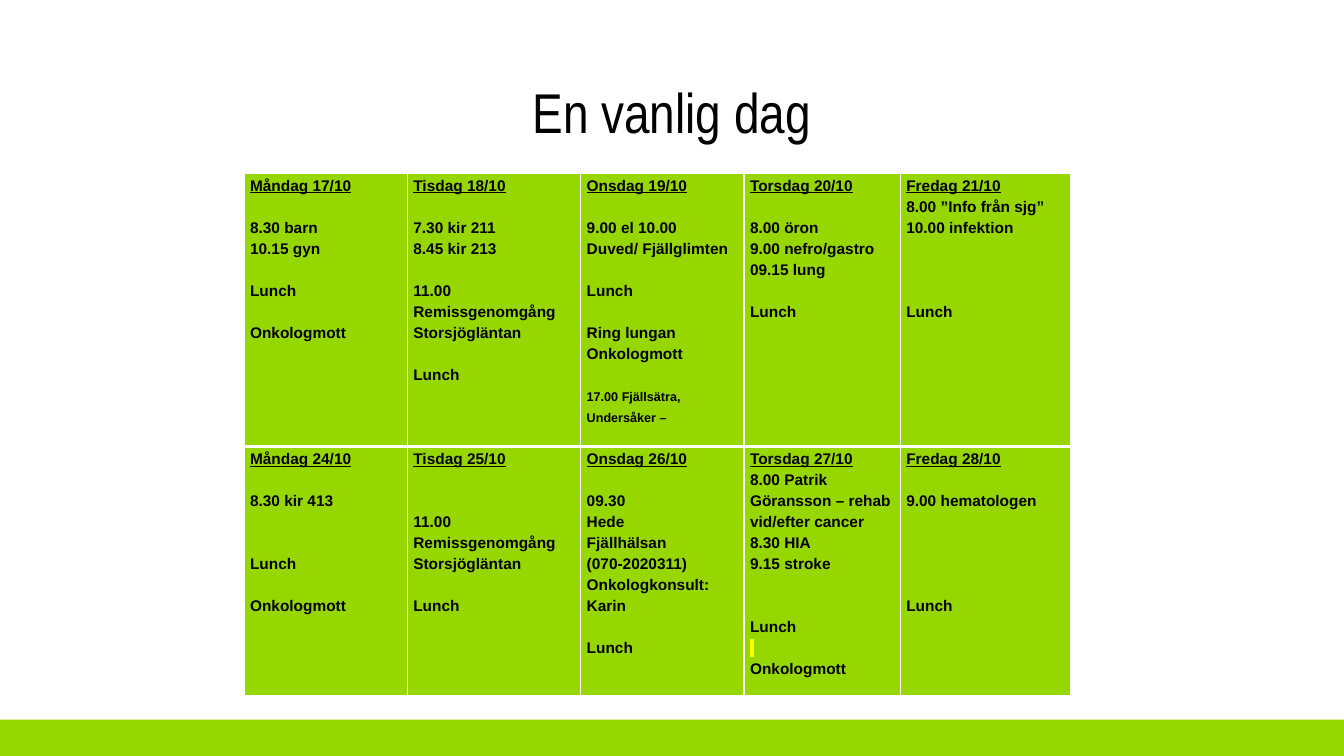
from lxml.etree import SubElement
from pptx import Presentation
from pptx.dml.color import RGBColor
from pptx.enum.shapes import MSO_SHAPE
from pptx.enum.text import MSO_ANCHOR, PP_ALIGN
from pptx.oxml.ns import qn
from pptx.util import Inches, Pt

WIDTH, HEIGHT = 13.33, 7.5
GREEN, WHITE, BLACK, YELLOW = "97D700", "FFFFFF", "000000", "FFFF00"
LINE = 15
COLUMNS = [1.62, 1.72, 1.62, 1.55, 1.69]
ROWS = [2.71, 2.47]

# Each day: heading, then groups of entries; a number is the count of free lines before the next entry.
WEEKS = [
    [
        ["Måndag 17/10", 1, "8.30 barn", "10.15 gyn", 1, "Lunch", 1, "Onkologmott"],
        ["Tisdag 18/10", 1, "7.30 kir 211", "8.45 kir 213", 1, "11.00",
         "Remissgenomgång", "Storsjögläntan", 1, "Lunch"],
        ["Onsdag 19/10", 1, "9.00 el 10.00", "Duved/ Fjällglimten", 1, "Lunch", 1,
         "Ring lungan", "Onkologmott", 1, ("17.00 Fjällsätra, Undersåker –", {"size": 9})],
        ["Torsdag 20/10", 1, "8.00 öron", "9.00 nefro/gastro", "09.15 lung", 1, "Lunch"],
        ["Fredag 21/10", "8.00 ”Info från sjg”", "10.00 infektion", 3, "Lunch"],
    ],
    [
        ["Måndag 24/10", 1, "8.30 kir 413", 2, "Lunch", 1, "Onkologmott"],
        ["Tisdag 25/10", 2, "11.00", "Remissgenomgång", "Storsjögläntan", 1, "Lunch"],
        ["Onsdag 26/10", 1, "09.30", "Hede", "Fjällhälsan", "(070-2020311)",
         "Onkologkonsult: Karin", 1, "Lunch"],
        ["Torsdag 27/10", "8.00 Patrik Göransson – rehab", "vid/efter cancer", "8.30 HIA",
         "9.15 stroke", 2, "Lunch", (" ", {"highlight": YELLOW}), "Onkologmott"],
        ["Fredag 28/10", 1, "9.00 hematologen", 4, "Lunch"],
    ],
]


def color(value):
    return RGBColor.from_string(value)


def add_color(parent, tag, value):
    SubElement(SubElement(parent, qn(tag)), qn("a:srgbClr"), val=value)


def write(para, text, size=11, font="Arial", bold=True, underline=False,
          highlight=None, align=PP_ALIGN.LEFT, spacing=Pt(LINE), before=0):
    para.alignment = align
    para.line_spacing = spacing
    if before:
        para.space_before = Pt(before)
    span = para.add_run()
    span.text = text
    span.font.size = Pt(size)
    span.font.bold = bold
    span.font.underline = underline
    span.font.color.rgb = color(BLACK)
    if highlight:
        add_color(span.font._element, "a:highlight", highlight)
    span.font.name = font


def add_title(page, left, top, width, height):
    box = page.shapes.add_textbox(Inches(left), Inches(top), Inches(width), Inches(height))
    frame = box.text_frame
    frame.word_wrap = True
    frame.vertical_anchor = MSO_ANCHOR.MIDDLE
    write(frame.paragraphs[0], "En vanlig dag", size=40, font="Arial Narrow",
          bold=False, align=PP_ALIGN.CENTER, spacing=0.9)


def add_footer_band(page, left, top, width, height):
    band = page.shapes.add_shape(MSO_SHAPE.RECTANGLE, Inches(left), Inches(top),
                                 Inches(width), Inches(height))
    band.shadow.inherit = False
    band.fill.solid()
    band.fill.fore_color.rgb = color(GREEN)
    band.line.fill.background()


def style_cell(cell, **borders):
    cell.margin_left = cell.margin_right = Inches(0.06)
    cell.margin_top = cell.margin_bottom = 0
    properties = cell._tc.get_or_add_tcPr()
    for side in ("L", "R", "T", "B"):
        line = SubElement(properties, qn(f"a:ln{side}"), w=str(Pt(borders.get(side, 1))))
        add_color(line, "a:solidFill", WHITE)
    cell.fill.solid()
    cell.fill.fore_color.rgb = color(GREEN)


def fill_day(cell, entries):
    frame = cell.text_frame
    para, free_lines = frame.paragraphs[0], 0
    for index, entry in enumerate(entries):
        if isinstance(entry, int):
            free_lines = entry
            continue
        text, style = entry if isinstance(entry, tuple) else (entry, {})
        if index:
            para = frame.add_paragraph()
        write(para, text, underline=index == 0, before=free_lines * LINE, **style)
        free_lines = 0


def add_schedule(page, left, top):
    table = page.shapes.add_table(len(ROWS), len(COLUMNS), Inches(left), Inches(top),
                                  Inches(sum(COLUMNS)), Inches(sum(ROWS))).table
    table.first_row = table.horz_banding = False
    for column, width in zip(table.columns, COLUMNS):
        column.width = Inches(width)
    for row, height, week, borders in zip(table.rows, ROWS, WEEKS, ({"B": 3}, {"T": 3})):
        row.height = Inches(height)
        for cell, entries in zip(row.cells, week):
            style_cell(cell, **borders)
            fill_day(cell, entries)


def main():
    deck = Presentation()
    deck.slide_width, deck.slide_height = Inches(WIDTH), Inches(HEIGHT)
    page = deck.slides.add_slide(deck.slide_layouts[6])
    add_footer_band(page, 0, HEIGHT - 0.36, WIDTH, 0.36)
    add_title(page, 0.94, 0.79, 11.44, 0.71)
    add_schedule(page, 2.42, 1.72)
    deck.save("out.pptx")


if __name__ == "__main__":
    main()
